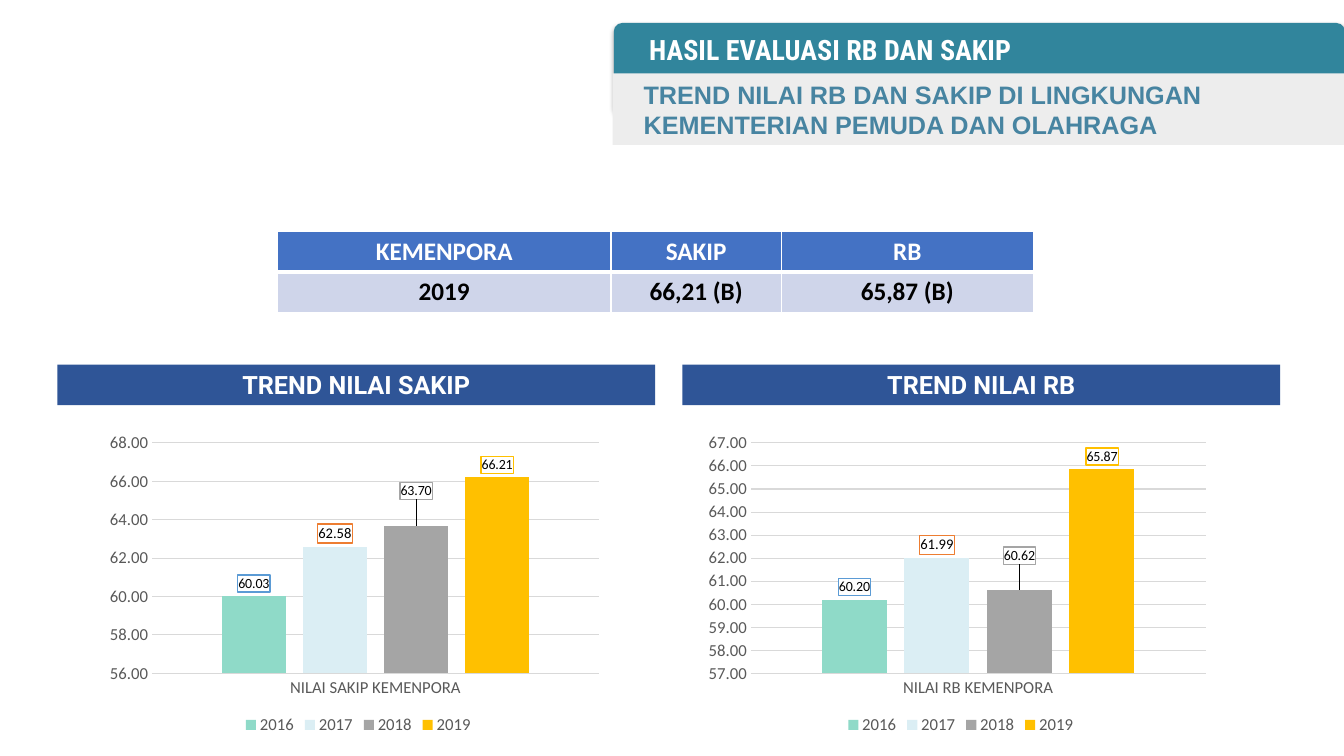
from copy import deepcopy
from lxml import etree
from pptx import Presentation
from pptx.chart.data import CategoryChartData
from pptx.dml.color import RGBColor
from pptx.enum import chart as ch, shapes, text
from pptx.oxml import parse_xml
from pptx.oxml.ns import nsdecls, qn
from pptx.util import Cm, Pt

WHITE = RGBColor(0xFF, 0xFF, 0xFF)
BLACK = RGBColor(0, 0, 0)
TEAL = RGBColor(0x31, 0x85, 0x9C)
PALE = RGBColor(0xED, 0xED, 0xED)
STEEL = RGBColor(0x47, 0x84, 0xA1)
NAVY = RGBColor(0x2F, 0x55, 0x97)
BLUE = RGBColor(0x44, 0x72, 0xC4)
LILAC = RGBColor(0xCF, 0xD5, 0xEA)
GRID = RGBColor(0xD9, 0xD9, 0xD9)
GREY = RGBColor(0x59, 0x59, 0x59)
MINT = RGBColor(0x8F, 0xDA, 0xC8)
ICE = RGBColor(0xDB, 0xEE, 0xF4)
SILVER = RGBColor(0xA5, 0xA5, 0xA5)
GOLD = RGBColor(0xFF, 0xC0, 0x00)
SKY = RGBColor(0x5B, 0x9B, 0xD5)
ORANGE = RGBColor(0xED, 0x7D, 0x31)

YEARS = [("2016", MINT, SKY, 10), ("2017", ICE, ORANGE, 10.5),
         ("2018", SILVER, SILVER, 10), ("2019", GOLD, GOLD, 10)]


def style(font, size, color, name="Calibri", bold=False):
    font.size, font.name, font.bold = Pt(size), name, bold
    font.color.rgb = color


def write(tf, lines, size=18, color=WHITE, name="Calibri", bold=True,
          align=text.PP_ALIGN.LEFT):
    for i, line in enumerate(lines.split("\n")):
        p = tf.add_paragraph() if i else tf.paragraphs[0]
        p.alignment = align
        r = p.add_run()
        r.text = line
        style(r.font, size, color, name, bold)


def block(s, kind, x, y, w, h, color):
    sp = s.shapes.add_shape(kind, Cm(x), Cm(y), Cm(w), Cm(h))
    sp.shadow.inherit = False
    sp.fill.solid()
    sp.fill.fore_color.rgb = color
    sp.line.fill.background()
    sp.text_frame.word_wrap = True
    return sp


def header(s, x, y, w):
    sp = block(s, shapes.MSO_SHAPE.ROUNDED_RECTANGLE, x, y, w, 2.29, TEAL)
    sp.adjustments[0] = 0.09
    effects = sp._element.spPr.find(qn("a:effectLst"))
    effects.append(parse_xml(
        f'<a:outerShdw {nsdecls("a")} blurRad="{Pt(3.1)}" dist="{Pt(1.8)}" dir="5400000" '
        'rotWithShape="0"><a:srgbClr val="000000"><a:alpha val="35000"/></a:srgbClr></a:outerShdw>'))

    tb = s.shapes.add_textbox(Cm(x + 0.43), Cm(y - 0.38), Cm(17.53), Cm(2.08))
    tf = tb.text_frame
    tf.word_wrap = True
    tf.margin_left = tf.margin_right = Cm(0.46)
    tf.vertical_anchor = text.MSO_ANCHOR.MIDDLE
    write(tf, "HASIL EVALUASI RB DAN SAKIP", size=20, name="Roboto Condensed")

    sp = block(s, shapes.MSO_SHAPE.RECTANGLE, x - 0.03, y + 1.27, w + 0.03, 1.8, PALE)
    tf = sp.text_frame
    tf.margin_left = Cm(0.78)
    tf.vertical_anchor = text.MSO_ANCHOR.MIDDLE
    write(tf, "TREND NILAI RB DAN SAKIP DI LINGKUNGAN\nKEMENTERIAN PEMUDA DAN OLAHRAGA",
          color=STEEL, name="Arial")


def border(cell, widths):
    tcPr = cell._tc.get_or_add_tcPr()
    for i, (side, width) in enumerate(zip("LRTB", widths)):
        tcPr.insert(i, parse_xml(
            f'<a:ln{side} {nsdecls("a")} w="{Pt(width)}"><a:solidFill>'
            f'<a:srgbClr val="{WHITE}"/></a:solidFill></a:ln{side}>'))


def score_table(s, x, y, col_widths, row_height):
    rows = [("KEMENPORA", "SAKIP", "RB"), ("2019", "66,21 (B)", "65,87 (B)")]
    looks = [(BLUE, WHITE, (1, 1, 1, 3)), (LILAC, BLACK, (1, 1, 3, 1))]
    tbl = s.shapes.add_table(len(rows), len(col_widths), Cm(x), Cm(y),
                             Cm(sum(col_widths)), Cm(row_height * len(rows))).table
    for col, width in zip(tbl.columns, col_widths):
        col.width = Cm(width)
    for i, (row, (fill, color, widths)) in enumerate(zip(rows, looks)):
        for j, value in enumerate(row):
            cell = tbl.cell(i, j)
            cell.fill.solid()
            cell.fill.fore_color.rgb = fill
            border(cell, widths)
            write(cell.text_frame, value, color=color, align=text.PP_ALIGN.CENTER)


def label_series(ser, size, frame, lift):
    dl = ser.data_labels
    dl.show_value = True
    dl.number_format, dl.number_format_is_linked = "0.00", False
    dl.position = ch.XL_LABEL_POSITION.OUTSIDE_END
    style(dl.font, size, BLACK)
    el = dl._element
    el.find(qn("c:numFmt")).addnext(parse_xml(
        f'<c:spPr {nsdecls("c", "a")}><a:solidFill><a:srgbClr val="{WHITE}"/></a:solidFill>'
        f'<a:ln w="{Pt(1)}"><a:solidFill><a:srgbClr val="{frame}"/></a:solidFill></a:ln></c:spPr>'))
    if lift:
        point = parse_xml(
            f'<c:dLbl {nsdecls("c")}><c:idx val="0"/><c:layout><c:manualLayout>'
            f'<c:x val="0"/><c:y val="{-lift}"/></c:manualLayout></c:layout></c:dLbl>')
        for child in el:
            if child.tag != qn("c:showLeaderLines"):
                point.append(deepcopy(child))
        el.insert(0, point)


def plot_layout(chart, x, y, w, h):
    area = chart._chartSpace.chart.plotArea
    for old in area.findall(qn("c:layout")):
        area.remove(old)
    layout = parse_xml(f'<c:layout {nsdecls("c")}><c:manualLayout/></c:layout>')
    values = [("layoutTarget", "inner"), ("xMode", "edge"), ("yMode", "edge"),
              ("x", x), ("y", y), ("w", w), ("h", h)]
    for tag, value in values:
        etree.SubElement(layout[0], qn("c:" + tag)).set("val", str(value))
    area.insert(0, layout)


def trend_chart(s, x, y, w, h, category, values, low, high, step):
    data = CategoryChartData(number_format="0.00")
    data.categories = [category]
    for (year, *_), value in zip(YEARS, values):
        data.add_series(year, [value])
    chart = s.shapes.add_chart(ch.XL_CHART_TYPE.COLUMN_CLUSTERED,
                               Cm(x), Cm(y), Cm(w), Cm(h), data).chart
    style(chart.font, 10, BLACK)
    chart.has_title = False
    chart.has_legend = True
    chart.legend.position = ch.XL_LEGEND_POSITION.BOTTOM
    chart.legend.include_in_layout = False
    style(chart.legend.font, 12, GREY)

    cat, val = chart.category_axis, chart.value_axis
    for axis in (cat, val):
        axis.major_tick_mark = axis.minor_tick_mark = ch.XL_TICK_MARK.NONE
        style(axis.tick_labels.font, 12, GREY)
    val.minimum_scale, val.maximum_scale, val.major_unit = low, high, step
    val.tick_labels.number_format = "0.00"
    val.tick_labels.number_format_is_linked = False
    val.format.line.fill.background()
    for line in (cat.format.line, val.major_gridlines.format.line):
        line.color.rgb = GRID
        line.width = Pt(0.75)

    plot = chart.plots[0]
    plot.vary_by_categories = False
    plot.gap_width, plot.overlap = 219, -27
    for ser, (year, color, frame, size) in zip(plot.series, YEARS):
        ser.format.fill.solid()
        ser.format.fill.fore_color.rgb = color
        label_series(ser, size, frame, 0.07 if year == "2018" else 0)
    plot_layout(chart, 0.08, 0.05, 0.91, 0.74)


def trend_panel(s, x, y, w, title, chart_inset, chart_width, **chart):
    sp = block(s, shapes.MSO_SHAPE.RECTANGLE, x, y, w, 1.02, NAVY)
    sp.text_frame.vertical_anchor = text.MSO_ANCHOR.MIDDLE
    write(sp.text_frame, title, name="Roboto", align=text.PP_ALIGN.CENTER)
    trend_chart(s, x + chart_inset, y + 1.58, chart_width, 7.85, **chart)


def main():
    prs = Presentation()
    prs.slide_width, prs.slide_height = Cm(33.87), Cm(19.05)
    s = prs.slides.add_slide(prs.slide_layouts[6])
    header(s, 15.47, 0.58, 18.42)
    score_table(s, 6.99, 5.82, (8.41, 4.29, 6.35), 1.03)
    trend_panel(s, 1.45, 9.19, 15.06, "TREND NILAI SAKIP", 1.32, 12.45,
                category="NILAI SAKIP KEMENPORA", values=(60.03, 62.58, 63.7, 66.21),
                low=56, high=68, step=2)
    trend_panel(s, 17.2, 9.19, 15.06, "TREND NILAI RB", 0.66, 12.65,
                category="NILAI RB KEMENPORA", values=(60.2, 61.99, 60.62, 65.87),
                low=57, high=67, step=1)
    prs.save("out.pptx")


if __name__ == "__main__":
    main()
